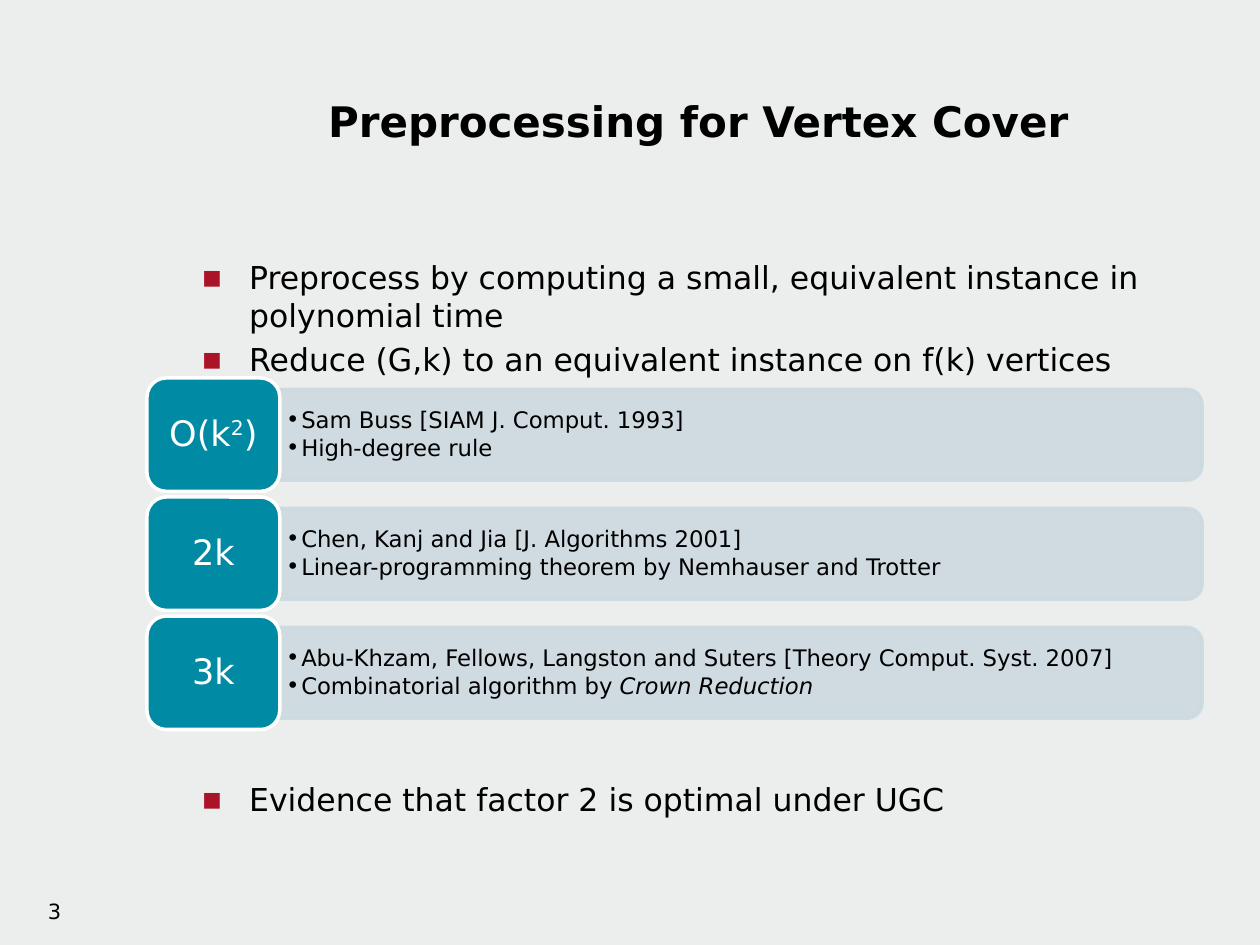
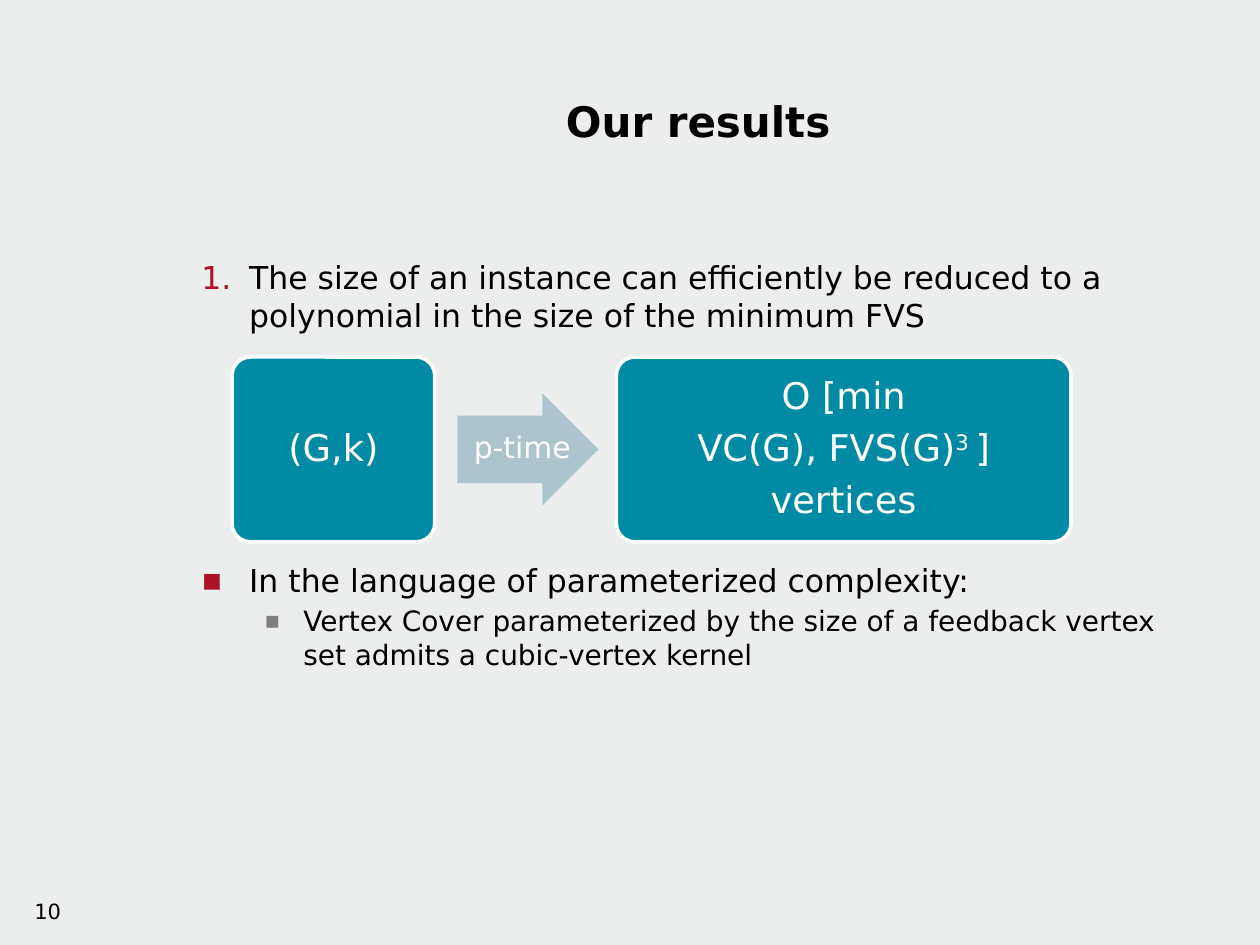
from math import cos, pi, sin

from lxml.etree import SubElement
from pptx import Presentation
from pptx.dml.color import RGBColor
from pptx.enum.shapes import MSO_SHAPE
from pptx.enum.text import MSO_ANCHOR, PP_ALIGN
from pptx.oxml.ns import qn
from pptx.util import Inches, Pt

COLOURS = {
    "background": "ECEDED", "text": "000000", "white": "FFFFFF",
    "teal": "008AA3", "band": "CCDAE0", "arrow": "ABC4CE",
    "red": "AA1328", "grey": "7F7F7F",
}
FONT = "DejaVu Sans"
COLS, ROWS = 120, 90
WIDTH, HEIGHT = Inches(10), Inches(7.5)
TITLE_BOX = (18, 4, 97, 15)
NUMBER_BOX = (0, 85, 7, 5)
BODY_LEFT, BODY_TOP, BODY_WIDTH = 18, 24, 97
BADGE_LEFT, BADGE_TOP, BADGE_WIDTH, BADGE_HEIGHT = 14, 36, 12.65, 10.8
BAND_WIDTH, BAND_HEIGHT = 87.83, 8.64
RESULT_PITCH = 11.34
FLOW_TOP, FLOW_HEIGHT = 34, 17.6

TITLE = {"size": Pt(24), "bold": True}
BODY = {"size": Pt(18)}
SUB_BODY = {"size": Pt(16)}
NUMBER = {"size": Pt(12)}
BAND_TEXT = {"size": Pt(13)}
BADGE_TEXT = {"size": Pt(20)}
FLOW_TEXT = {"size": Pt(21)}
ARROW_TEXT = {"size": Pt(17)}
CENTRED = {"alignment": PP_ALIGN.CENTER}
DIAGRAM = {"alignment": PP_ALIGN.CENTER, "line_spacing": 0.9}
BULLETS = {
    "square": dict(char="▪", colour="red", indent=0.38, hang=0.38),
    "number": dict(char=None, colour="red", indent=0.38, hang=0.38),
    "sub": dict(char="▪", colour="grey", indent=0.81, hang=0.31, size=85),
    "dot": dict(char="•", colour="text", indent=0.12, hang=0.12),
}


def rgb(name):
    """Return the named colour."""
    return RGBColor.from_string(COLOURS[name])


def grid(left, top, width, height):
    """Turn grid columns and rows into slide lengths."""
    cell_w, cell_h = WIDTH / COLS, HEIGHT / ROWS
    return [round(n * u) for n, u in
            zip((left, top, width, height), (cell_w, cell_h) * 2)]


def set_all(target, values):
    """Set several attributes of one object."""
    for name, value in values.items():
        setattr(target, name, value)


def add_bullet(p, kind):
    """Give a paragraph the bullet and hanging indent of a kind."""
    b = BULLETS[kind]
    pPr = p._p.get_or_add_pPr()
    pPr.set("marL", str(Inches(b["indent"])))
    pPr.set("indent", str(-Inches(b["hang"])))
    colour = SubElement(pPr, qn("a:buClr"))
    SubElement(colour, qn("a:srgbClr")).set("val", COLOURS[b["colour"]])
    if "size" in b:
        SubElement(pPr, qn("a:buSzPct")).set("val", str(b["size"] * 1000))
    SubElement(pPr, qn("a:buFont")).set("typeface", FONT)
    if b["char"]:
        SubElement(pPr, qn("a:buChar")).set("char", b["char"])
    else:
        SubElement(pPr, qn("a:buAutoNum")).set("type", "arabicPeriod")


def add_runs(p, runs, fmt, colour):
    """Fill a paragraph from a string or a list of (text, style) pairs."""
    pairs = [(runs, "")] if isinstance(runs, str) else runs
    for text, style in pairs:
        r = p.add_run()
        r.text = text
        set_all(r.font, {"name": FONT, "italic": style == "italic", **fmt})
        r.font.color.rgb = rgb(colour)
        if style == "super":
            r.font._element.set("baseline", "30000")


def write(sp, lines, fmt, colour="text", para=None, bullet=None,
          anchor=MSO_ANCHOR.MIDDLE, insets=(0.1, 0.05, 0.1, 0.05), wrap=True):
    """Write equally formatted paragraphs into a shape."""
    tf = sp.text_frame
    sides = ("margin_left", "margin_top", "margin_right", "margin_bottom")
    set_all(tf, dict(zip(sides, map(Inches, insets))))
    set_all(tf, {"word_wrap": wrap, "vertical_anchor": anchor})
    for i, line in enumerate(lines):
        p = tf.paragraphs[0] if i == 0 else tf.add_paragraph()
        if bullet:
            add_bullet(p, bullet)
        set_all(p, para or {})
        add_runs(p, line, fmt, colour)


def paint(sp, fill, line=None, alpha=None):
    """Set fill, outline and opacity of a shape."""
    sp.shadow.inherit = False
    sp.fill.solid()
    sp.fill.fore_color.rgb = rgb(fill)
    if line:
        sp.line.color.rgb = rgb(line)
        sp.line.width = Pt(2)
    else:
        sp.line.fill.background()
    if alpha:
        for clr in sp._element.spPr.iter(qn("a:srgbClr")):
            SubElement(clr, qn("a:alpha")).set("val", str(alpha * 1000))


def add_block(s, box, lines, fmt, kind=MSO_SHAPE.ROUNDED_RECTANGLE,
              corner=0.1, gap=7, inset=0.05):
    """Add a teal rounded block with centred white text."""
    sp = s.shapes.add_shape(kind, *grid(*box))
    sp.adjustments[0] = corner
    paint(sp, "teal", "white")
    write(sp, lines, fmt, "white", {**DIAGRAM, "space_after": Pt(gap)},
          insets=(inset,) * 4)


def add_band(s, box, lines):
    """Add a pale band with rounded right corners and dotted lines of text."""
    left, top, width, height = grid(*box)
    radius = height / 6
    right, bottom = left + width, top + height
    steps = [i * pi / 16 for i in range(9)]
    upper = [(right - radius + radius * sin(a), top + radius - radius * cos(a))
             for a in steps]
    lower = [(x, top + bottom - y) for x, y in reversed(upper)]
    fb = s.shapes.build_freeform(left, top)
    fb.add_line_segments(upper + lower + [(left, bottom)], close=True)
    sp = fb.convert_to_shape()
    paint(sp, "band", "band", 90)
    write(sp, lines, BAND_TEXT, bullet="dot", insets=(0.05, 0.06, 0.09, 0.06),
          para={"alignment": PP_ALIGN.LEFT, "line_spacing": 0.9,
                "space_after": Pt(2)})


def add_arrow(s, box, label):
    """Add a labelled arrow between two blocks."""
    sp = s.shapes.add_shape(MSO_SHAPE.RIGHT_ARROW, *grid(*box))
    sp.adjustments[0] = 0.6
    paint(sp, "arrow")
    write(sp, [label], ARROW_TEXT, "white", {**DIAGRAM, "space_after": Pt(6)},
          insets=(0.18, 0, 0, 0), wrap=False)


def add_body(s, top, height, items):
    """Add a text box of (bullet kind, text) items."""
    sp = s.shapes.add_textbox(*grid(BODY_LEFT, top, BODY_WIDTH, height))
    write(sp, [], BODY, anchor=MSO_ANCHOR.TOP)
    tf = sp.text_frame
    for i, (kind, text) in enumerate(items):
        p = tf.paragraphs[0] if i == 0 else tf.add_paragraph()
        fmt = SUB_BODY if kind == "sub" else BODY
        add_bullet(p, kind)
        if i:
            p.space_before = round(fmt["size"] * 0.2)
        add_runs(p, text, fmt, "text")


def add_slide(prs, title, number):
    """Add a slide with its title and number."""
    s = prs.slides.add_slide(prs.slide_layouts[6])
    write(s.shapes.add_textbox(*grid(*NUMBER_BOX)), [number], NUMBER,
          para={"alignment": PP_ALIGN.RIGHT}, anchor=MSO_ANCHOR.TOP)
    write(s.shapes.add_textbox(*grid(*TITLE_BOX)), [title], TITLE, para=CENTRED)
    return s


def add_preprocessing(prs):
    """Build the slide on known kernel sizes."""
    s = add_slide(prs, "Preprocessing for Vertex Cover", "3")
    add_body(s, BODY_TOP, 12, [
        ("square", "Preprocess by computing a small, equivalent instance in "
                   "polynomial time"),
        ("square", "Reduce (G,k) to an equivalent instance on f(k) vertices"),
    ])
    results = [
        ([("O(k", ""), ("2", "super"), (")", "")],
         ["Sam Buss [SIAM J. Comput. 1993]", "High-degree rule"]),
        ("2k", ["Chen, Kanj and Jia [J. Algorithms 2001]",
                "Linear-programming theorem by Nemhauser and Trotter"]),
        ("3k", ["Abu-Khzam, Fellows, Langston and Suters "
                "[Theory Comput. Syst. 2007]",
                [("Combinatorial algorithm by ", ""),
                 ("Crown Reduction", "italic")]]),
    ]
    for i, (size, lines) in enumerate(results):
        top = BADGE_TOP + i * RESULT_PITCH
        add_band(s, (BADGE_LEFT + BADGE_WIDTH,
                     top + (BADGE_HEIGHT - BAND_HEIGHT) / 2,
                     BAND_WIDTH, BAND_HEIGHT), lines)
        add_block(s, (BADGE_LEFT, top, BADGE_WIDTH, BADGE_HEIGHT), [size],
                  BADGE_TEXT, corner=0.17)
    add_body(s, 73.7, 5, [
        ("square", "Evidence that factor 2 is optimal under UGC")])


def add_results(prs):
    """Build the slide on the new kernel."""
    s = add_slide(prs, "Our results", "10")
    add_body(s, BODY_TOP, 9, [
        ("number", "The size of an instance can efficiently be reduced to a "
                   "polynomial in the size of the minimum FVS")])
    add_block(s, (22.1, FLOW_TOP, 19.3, FLOW_HEIGHT), ["(G,k)"], FLOW_TEXT)
    add_arrow(s, (43.56, 37.44, 13.44, 10.7), "p-time")
    add_block(s, (58.7, FLOW_TOP, 43.3, FLOW_HEIGHT), [
        "O [min",
        [("VC(G), FVS(G)", ""), ("3 ", "super"), ("]", "")],
        "vertices",
    ], FLOW_TEXT)
    add_body(s, 52.8, 12, [
        ("square", "In the language of parameterized complexity:"),
        ("sub", "Vertex Cover parameterized by the size of a feedback vertex "
                "set admits a cubic-vertex kernel"),
    ])


def main():
    """Build and save the presentation."""
    prs = Presentation()
    set_all(prs, {"slide_width": WIDTH, "slide_height": HEIGHT})
    fill = prs.slide_master.background.fill
    fill.solid()
    fill.fore_color.rgb = rgb("background")
    add_preprocessing(prs)
    add_results(prs)
    prs.save("out.pptx")


if __name__ == "__main__":
    main()
